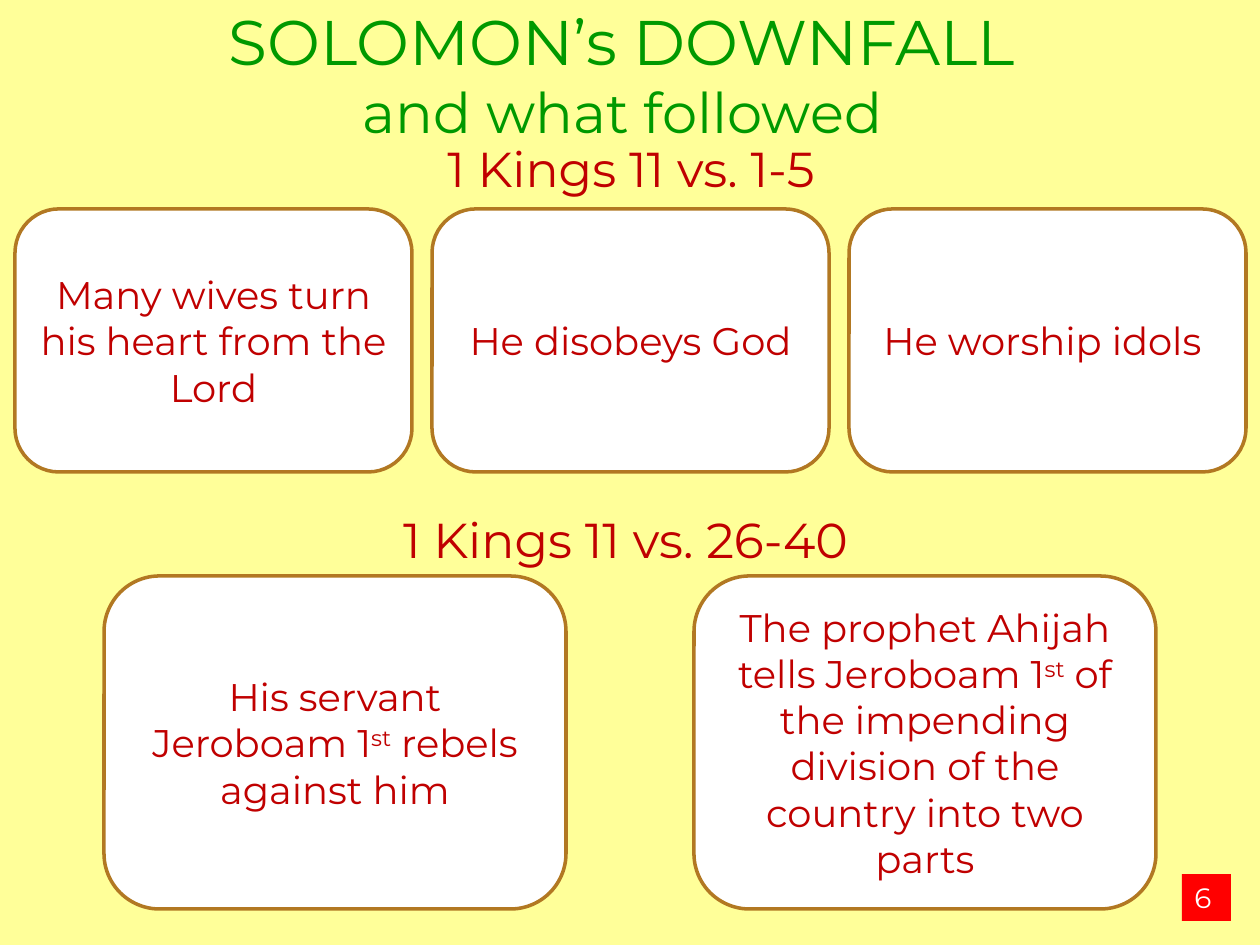
from dataclasses import dataclass

from pptx import Presentation
from pptx.dml.color import RGBColor
from pptx.enum.shapes import MSO_SHAPE as Preset
from pptx.enum.text import MSO_ANCHOR as Anchor, PP_ALIGN as Align
from pptx.util import Emu, Pt

EMU_PER_PX = 914400 / 126
FONT = "Montserrat"
COLORS = {
    "background": "FFFF99",
    "title": "009900",
    "text": "C00000",
    "card": "FFFFFF",
    "border": "B27822",
    "badge": "FF0000",
    "number": "FFFFFF",
}


@dataclass(frozen=True)
class Box:
    left: int
    top: int
    width: int
    height: int

    def emu(self) -> list[Emu]:
        return [px(n) for n in (self.left, self.top, self.width, self.height)]


@dataclass(frozen=True)
class CardRow:
    first: Box
    gap: int
    texts: tuple[str, ...]


@dataclass(frozen=True)
class Heading:
    box: Box
    text: str


HEADINGS = (
    Heading(Box(353, 132, 556, 72), "1 Kings 11 vs. 1-5"),
    Heading(Box(323, 503, 605, 72), "1 Kings 11 vs. 26-40"),
)
CARD_ROWS = (
    CardRow(Box(15, 209, 397, 263), 20, (
        "Many wives turn his heart from the Lord",
        "He disobeys God",
        "He worship idols ",
    )),
    CardRow(Box(104, 576, 462, 333), 128, (
        "His servant Jeroboam 1^st^ rebels against him",
        "The prophet Ahijah tells Jeroboam 1^st^ of the impending division "
        "of the country into two parts",
    )),
)


def px(length: int) -> Emu:
    return Emu(round(length * EMU_PER_PX))


def rgb(name: str) -> RGBColor:
    return RGBColor.from_string(COLORS[name])


def write(paragraph, text: str, *, size: int, color: str = "text",
          align: Align = Align.CENTER) -> None:
    paragraph.alignment = align
    for index, part in enumerate(text.split("^")):
        run = paragraph.add_run()
        run.text = part
        run.font.name = FONT
        run.font.size = Pt(size)
        run.font.color.rgb = rgb(color)
        if index % 2:
            run._r.get_or_add_rPr().set("baseline", "30000")


def add_panel(slide, preset: Preset, box: Box, fill: str):
    panel = slide.shapes.add_shape(preset, *box.emu())
    panel.shadow.inherit = False
    panel.fill.solid()
    panel.fill.fore_color.rgb = rgb(fill)
    panel.line.fill.background()
    panel.text_frame.word_wrap = True
    return panel


def add_title(slide) -> None:
    title = slide.shapes.title
    title.left, title.top, title.width, title.height = Box(0, -4, 1260, 158).emu()
    frame = title.text_frame
    frame.vertical_anchor = Anchor.TOP
    write(frame.paragraphs[0], "SOLOMON’s DOWNFALL ", size=36, color="title")
    write(frame.add_paragraph(), "and what followed ", size=32, color="title")


def add_heading(slide, heading: Heading) -> None:
    frame = slide.shapes.add_textbox(*heading.box.emu()).text_frame
    frame.word_wrap = True
    write(frame.paragraphs[0], heading.text, size=28)


def add_card_row(slide, row: CardRow) -> None:
    first = row.first
    for index, text in enumerate(row.texts):
        left = first.left + index * (first.width + row.gap)
        box = Box(left, first.top, first.width, first.height)
        card = add_panel(slide, Preset.ROUNDED_RECTANGLE, box, "card")
        card.line.color.rgb = rgb("border")
        card.line.width = Pt(2)
        card.text_frame.vertical_anchor = Anchor.MIDDLE
        write(card.text_frame.paragraphs[0], text, size=22)


def add_page_number(slide) -> None:
    badge = add_panel(slide, Preset.RECTANGLE, Box(1182, 874, 49, 47), "badge")
    badge.text_frame.vertical_anchor = Anchor.TOP
    write(badge.text_frame.paragraphs[0], "6", size=16, color="number",
          align=Align.LEFT)


def main() -> None:
    deck = Presentation()
    deck.slide_width, deck.slide_height = px(1260), px(945)
    slide = deck.slides.add_slide(deck.slide_layouts.get_by_name("Title Only"))
    slide.background.fill.solid()
    slide.background.fill.fore_color.rgb = rgb("background")
    add_title(slide)
    for row in CARD_ROWS:
        add_card_row(slide, row)
    add_page_number(slide)
    for heading in HEADINGS:
        add_heading(slide, heading)
    deck.save("out.pptx")


if __name__ == "__main__":
    main()
